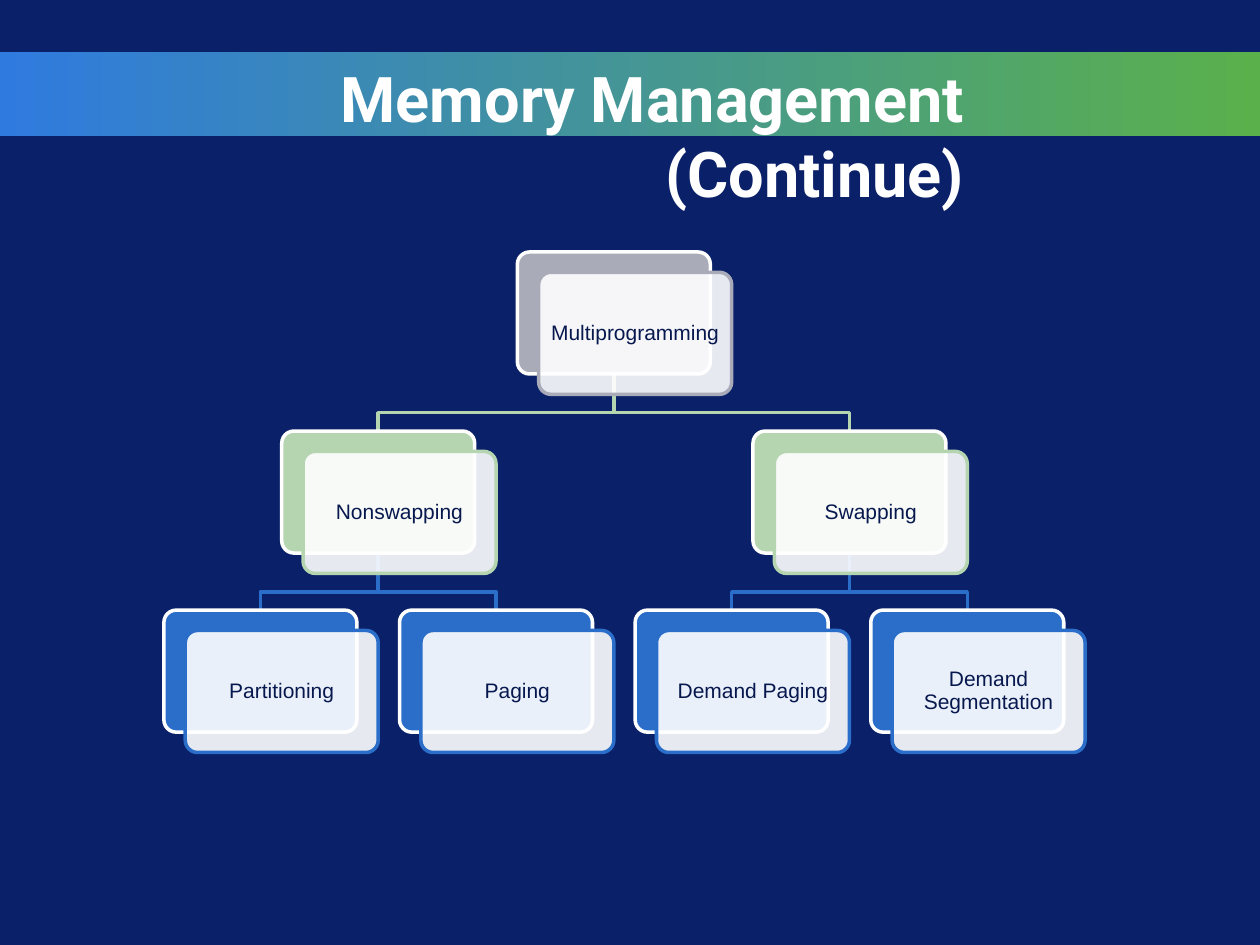
from dataclasses import dataclass
from typing import Any, Optional

from lxml import etree
from pptx import Presentation
from pptx.dml.color import RGBColor
from pptx.enum.shapes import MSO_SHAPE
from pptx.enum.text import MSO_ANCHOR, MSO_AUTO_SIZE, PP_ALIGN
from pptx.oxml.ns import qn
from pptx.util import Cm, Pt

RECTANGLE, ROUNDED = MSO_SHAPE.RECTANGLE, MSO_SHAPE.ROUNDED_RECTANGLE
MIDDLE, TOP = MSO_ANCHOR.MIDDLE, MSO_ANCHOR.TOP
CENTER, RIGHT = PP_ALIGN.CENTER, PP_ALIGN.RIGHT
GROW = MSO_AUTO_SIZE.SHAPE_TO_FIT_TEXT

NAVY = RGBColor(0x0A, 0x20, 0x68)
INK = RGBColor(0x07, 0x18, 0x4E)
WHITE = RGBColor(0xFF, 0xFF, 0xFF)
GRAY = RGBColor(0xAA, 0xAB, 0xB9)
MINT = RGBColor(0xB5, 0xD5, 0xB1)
BLUE = RGBColor(0x2A, 0x6E, 0xCA)
BAND_START = RGBColor(0x2F, 0x7A, 0xDF)
BAND_END = RGBColor(0x5A, 0xB1, 0x4B)
LEVEL_COLORS = (GRAY, MINT, BLUE)

CARD_WIDTH, CARD_HEIGHT = Cm(3.89), Cm(2.46)
SHIFT_X, SHIFT_Y = Cm(0.43), Cm(0.41)
FIRST_CENTER, COLUMN_PITCH = Cm(5.25), Cm(4.75)
FIRST_TOP, LEVEL_PITCH = Cm(5.08), Cm(3.61)
BEND_DROP = Cm(0.78)
OUTLINE = Pt(2)

TITLE_FONT = {"name": "Roboto", "size": Pt(36), "bold": True}
CARD_FONT = {"name": "Arial", "size": Pt(12), "bold": False}


@dataclass(frozen=True)
class Node:
    """A card in the tree, placed by column and level."""

    label: str
    column: float
    level: int
    parent: Optional["Node"] = None

    @property
    def center(self) -> int:
        """Horizontal centre of the back card."""
        return int(FIRST_CENTER + self.column * COLUMN_PITCH)

    @property
    def top(self) -> int:
        """Top edge of the back card."""
        return FIRST_TOP + self.level * LEVEL_PITCH


ROOT = Node("Multiprogramming", 1.5, 0)
NONSWAPPING = Node("Nonswapping", 0.5, 1, ROOT)
SWAPPING = Node("Swapping", 2.5, 1, ROOT)
NODES = (
    ROOT,
    NONSWAPPING,
    Node("Partitioning", 0, 2, NONSWAPPING),
    Node("Paging", 1, 2, NONSWAPPING),
    SWAPPING,
    Node("Demand Paging", 2, 2, SWAPPING),
    Node("Demand Segmentation", 3, 2, SWAPPING),
)


def set_values(target: Any, values: dict[str, Any]) -> None:
    """Set each named attribute on the target."""
    for name, value in values.items():
        setattr(target, name, value)


def write_text(box: Any, text: str, frame: dict[str, Any], para_format: dict[str, Any],
               font: dict[str, Any], color: RGBColor) -> None:
    """Write one formatted paragraph in a box."""
    set_values(box.text_frame, {"word_wrap": True, **frame})
    para = box.text_frame.paragraphs[0]
    set_values(para, para_format)
    span = para.add_run()
    span.text = text
    set_values(span.font, font)
    span.font.color.rgb = color


def draw_band(page: Any, width: int) -> None:
    """Draw the gradient band behind the title."""
    band = page.shapes.add_shape(RECTANGLE, 0, Cm(1.05), width, Cm(1.7))
    band.shadow.inherit = False
    band.line.fill.background()
    band.fill.gradient()
    band.fill.gradient_angle = 0
    for stop, color in zip(band.fill.gradient_stops, (BAND_START, BAND_END)):
        stop.color.rgb = color


def draw_title(page: Any) -> None:
    """Draw the slide title."""
    box = page.shapes.add_textbox(Cm(0.84), Cm(1.07), Cm(18.85), Cm(1.8))
    write_text(box, "Memory Management (Continue)",
               {"vertical_anchor": TOP, "auto_size": GROW},
               {"alignment": RIGHT}, TITLE_FONT, WHITE)


def draw_branch(page: Any, node: Node) -> None:
    """Draw the bent line from a parent card to its child."""
    start = node.parent.top + CARD_HEIGHT
    bend = start + BEND_DROP
    builder = page.shapes.build_freeform(node.parent.center, start)
    builder.add_line_segments(
        [(node.parent.center, bend), (node.center, bend), (node.center, node.top)], close=False)
    branch = builder.convert_to_shape()
    branch.shadow.inherit = False
    branch.fill.background()
    branch.line.color.rgb = LEVEL_COLORS[node.level]
    branch.line.width = OUTLINE


def draw_card(page: Any, left: int, top: int, fill: RGBColor, line: RGBColor) -> Any:
    """Draw one rounded card and return it."""
    card = page.shapes.add_shape(ROUNDED, left, top, CARD_WIDTH, CARD_HEIGHT)
    card.adjustments[0] = 0.1
    card.shadow.inherit = False
    card.fill.solid()
    card.fill.fore_color.rgb = fill
    card.line.color.rgb = line
    card.line.width = OUTLINE
    return card


def draw_node(page: Any, node: Node) -> None:
    """Draw a coloured card with a translucent labelled card over it."""
    color = LEVEL_COLORS[node.level]
    left = node.center - CARD_WIDTH // 2
    draw_card(page, left, node.top, color, WHITE)
    front = draw_card(page, left + SHIFT_X, node.top + SHIFT_Y, WHITE, color)
    tint = front.element.spPr.find(qn("a:solidFill")).find(qn("a:srgbClr"))
    etree.SubElement(tint, qn("a:alpha")).set("val", "90000")
    sides = ("margin_left", "margin_right", "margin_top", "margin_bottom")
    write_text(front, node.label,
               {"vertical_anchor": MIDDLE, **dict.fromkeys(sides, Cm(0.06))},
               {"alignment": CENTER, "line_spacing": 0.9}, CARD_FONT, INK)


def main() -> None:
    """Build the slide and save it."""
    deck = Presentation()
    deck.slide_width, deck.slide_height = Cm(25.4), Cm(19.05)
    page = deck.slides.add_slide(deck.slide_layouts[6])
    page.background.fill.solid()
    page.background.fill.fore_color.rgb = NAVY
    draw_band(page, deck.slide_width)
    draw_title(page)
    for node in NODES:
        if node.parent:
            draw_branch(page, node)
    for node in NODES:
        draw_node(page, node)
    deck.save("out.pptx")


if __name__ == "__main__":
    main()
